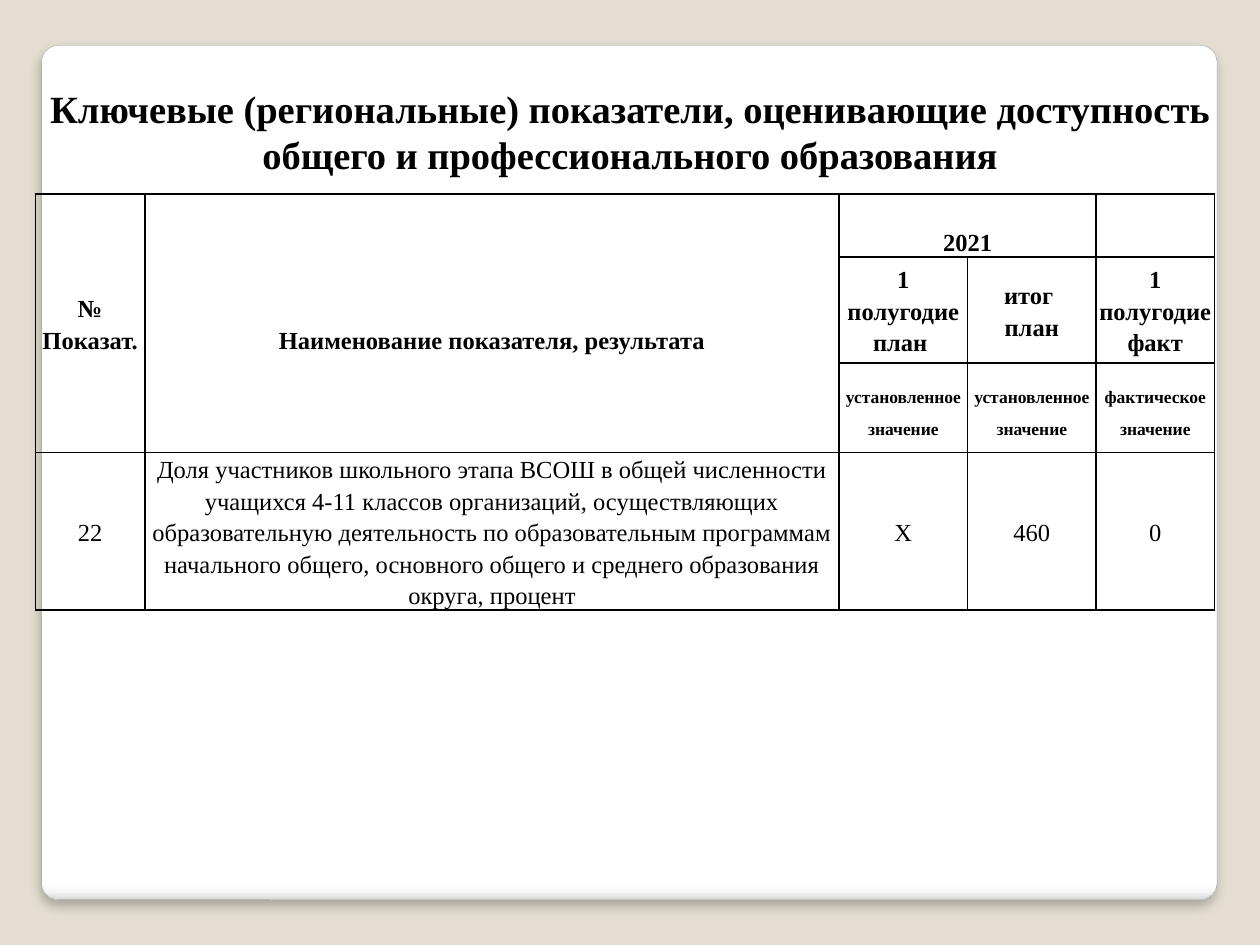
from lxml.etree import SubElement
from pptx import Presentation
from pptx.dml.color import RGBColor
from pptx.enum.shapes import MSO_SHAPE
from pptx.enum.text import MSO_ANCHOR as Anchor, PP_ALIGN as Align
from pptx.oxml import parse_xml
from pptx.oxml.ns import nsdecls, qn
from pptx.util import Inches, Pt

BLACK = RGBColor(0x00, 0x00, 0x00)
BEIGE = RGBColor(0xE3, 0xDE, 0xD1)
GREY = RGBColor(0xA4, 0xA4, 0xA4)
FONT = "Times New Roman"

TITLE = ("Ключевые (региональные) показатели, оценивающие доступность "
         "общего и профессионального образования")
HEADER_SIZE, NOTE_SIZE, TITLE_SIZE = 14, 10, 22
COLUMNS = [0.87, 5.51, 1.02, 1.02, 0.94]
ROWS = [0.5, 0.84, 0.71, 1.25]
CELLS = [
    [["№", "Показат."], ["Наименование показателя, результата"], ["2021"], [], []],
    [[], [], ["1 полугодие план "], ["итог ", "план"], ["1 полугодие факт"]],
    [[], [], ["установленное значение"], ["установленное значение"],
     ["фактическое значение"]],
    [["22"],
     ["Доля участников школьного этапа ВСОШ в общей численности учащихся "
      "4-11 классов организаций, осуществляющих образовательную деятельность "
      "по образовательным программам начального общего, основного общего и "
      "среднего образования округа, процент"],
     ["X"], ["460"], ["0"]],
]
MERGES = [((0, 0), (2, 0)), ((0, 1), (2, 1)), ((0, 2), (0, 3))]
NAME_CELL, YEAR_CELL = (0, 1), (0, 2)
PANEL_STOPS = [(0, "FFFFFF"), (98, "FFFFFF"), (99, "F7F7F7"), (100, "DADADA")]


def add_text(paragraph, text, size, bold):
    paragraph.alignment = Align.CENTER
    run = paragraph.add_run()
    run.text = text
    run.font.name = FONT
    run.font.size = Pt(size)
    run.font.bold = bold
    run.font.color.rgb = BLACK


def add_panel(slide):
    panel = slide.shapes.add_shape(MSO_SHAPE.ROUNDED_RECTANGLE, Inches(0.33),
                                   Inches(0.36), Inches(9.33), Inches(6.78))
    panel.adjustments[0] = 0.02
    panel.line.color.rgb = GREY
    panel.line.width = Pt(0.16)
    panel.fill.gradient()
    panel.fill.gradient_angle = 270
    properties = panel.element.spPr
    stop_list = properties.find(qn("a:gradFill")).find(qn("a:gsLst"))
    for stop in list(stop_list):
        stop_list.remove(stop)
    for position, colour in PANEL_STOPS:
        stop = SubElement(stop_list, qn("a:gs"), pos=str(position * 1000))
        SubElement(stop, qn("a:srgbClr"), val=colour)
    properties.append(parse_xml(
        f'<a:effectLst {nsdecls("a")}><a:outerShdw blurRad="{Pt(6)}" '
        f'dist="{Pt(4)}" dir="5400000" rotWithShape="0"><a:srgbClr val="000000">'
        '<a:alpha val="25000"/></a:srgbClr></a:outerShdw></a:effectLst>'))


def add_title(slide):
    title = slide.shapes.add_textbox(0, Inches(0.6), Inches(10), Inches(0.88))
    frame = title.text_frame
    frame.word_wrap = True
    frame.vertical_anchor = Anchor.MIDDLE
    add_text(frame.paragraphs[0], TITLE, TITLE_SIZE, True)


def draw_borders(cell):
    properties = cell._tc.get_or_add_tcPr()
    for index, side in enumerate(("lnL", "lnR", "lnT", "lnB")):
        properties.insert(index, parse_xml(
            f'<a:{side} {nsdecls("a")} w="{Pt(1)}"><a:solidFill>'
            f'<a:srgbClr val="{BLACK}"/></a:solidFill></a:{side}>'))


def fill_cell(cell, place, lines):
    row, _ = place
    cell.fill.background()
    cell.margin_left = cell.margin_right = Inches(0.02)
    cell.margin_top = Pt(18) if place == NAME_CELL else 0
    cell.margin_bottom = 0
    cell.vertical_anchor = Anchor.BOTTOM if place == YEAR_CELL else Anchor.MIDDLE
    draw_borders(cell)
    frame = cell.text_frame
    for index, line in enumerate(lines):
        paragraph = frame.add_paragraph() if index else frame.paragraphs[0]
        paragraph.line_spacing = Pt(18)
        add_text(paragraph, line, NOTE_SIZE if row == 2 else HEADER_SIZE, row < 3)


def add_indicator_table(slide):
    table = slide.shapes.add_table(len(ROWS), len(COLUMNS), Inches(0.28), Inches(1.54),
                                   Inches(sum(COLUMNS)), Inches(sum(ROWS))).table
    table.first_row = table.horz_banding = False
    for column, width in zip(table.columns, COLUMNS):
        column.width = Inches(width)
    for row, height in zip(table.rows, ROWS):
        row.height = Inches(height)
    for first, last in MERGES:
        table.cell(*first).merge(table.cell(*last))
    for row, contents in enumerate(CELLS):
        for column, lines in enumerate(contents):
            fill_cell(table.cell(row, column), (row, column), lines)


def main():
    presentation = Presentation()
    presentation.slide_width = Inches(10)
    presentation.slide_height = Inches(7.5)
    slide = presentation.slides.add_slide(presentation.slide_layouts[6])
    slide.background.fill.solid()
    slide.background.fill.fore_color.rgb = BEIGE
    add_panel(slide)
    add_title(slide)
    add_indicator_table(slide)
    presentation.save("out.pptx")


if __name__ == "__main__":
    main()
